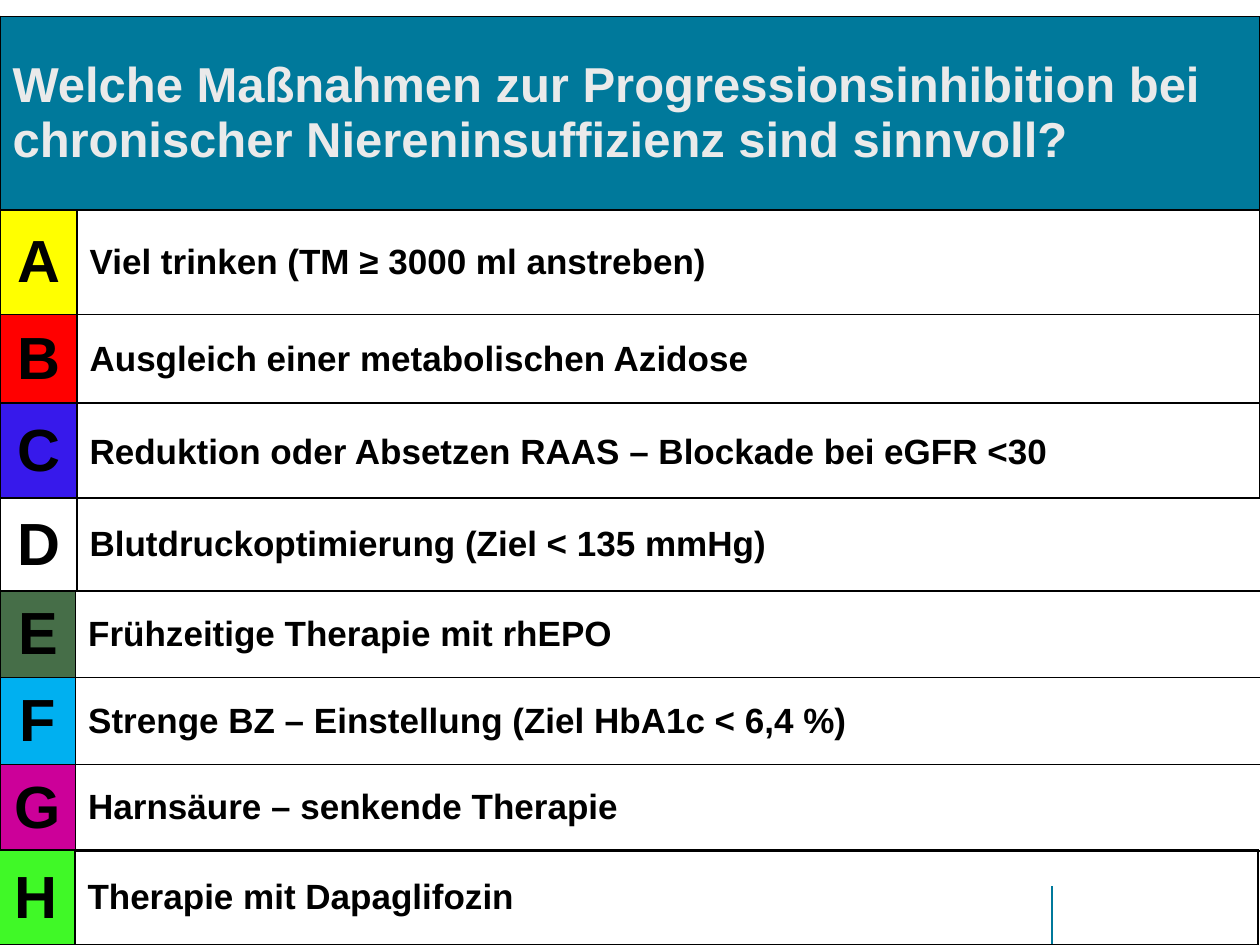
from pptx import Presentation
from pptx.dml.color import RGBColor as RGB
from pptx.enum.shapes import MSO_CONNECTOR as Line
from pptx.enum.text import MSO_ANCHOR as Anchor, PP_ALIGN as Align
from pptx.oxml import parse_xml
from pptx.oxml.ns import nsdecls
from pptx.util import Pt


class Theme:
    font = "Arial"
    teal, pale, ink = "00799B", "EAEAEA", "000000"
    head, mark, body = 28, 34, 20


def add_grid(left, top, cols, rows):
    """Add a plain table from column widths and row heights in points."""
    grid = slide.shapes.add_table(
        len(rows), len(cols), Pt(left), Pt(top), Pt(sum(cols)), Pt(sum(rows))
    ).table
    grid.first_row = grid.horz_banding = False
    for col, width in zip(grid.columns, cols):
        col.width = Pt(width)
    for row, height in zip(grid.rows, rows):
        row.height = Pt(height)
    return grid


def fill_cell(cell, text, size, ink, fill=None, align=Align.LEFT):
    props = cell._tc.get_or_add_tcPr()
    for side in "LRTB":
        props.append(parse_xml(
            f'<a:ln{side} {nsdecls("a")} w="{Pt(1)}"><a:solidFill>'
            f'<a:srgbClr val="{Theme.ink}"/></a:solidFill></a:ln{side}>'))
    if fill:
        cell.fill.solid()
        cell.fill.fore_color.rgb = RGB.from_string(fill)
    else:
        cell.fill.background()
    cell.vertical_anchor = Anchor.MIDDLE
    cell.text = text
    para = cell.text_frame.paragraphs[0]
    para.alignment = align
    para.font.name, para.font.size, para.font.bold = Theme.font, Pt(size), True
    para.font.color.rgb = RGB.from_string(ink)
    return para


deck = Presentation()
deck.slide_width, deck.slide_height = Pt(720), Pt(540)
slide = deck.slides.add_slide(deck.slide_layouts[6])

rule = slide.shapes.add_connector(
    Line.STRAIGHT, Pt(601.2), Pt(540), Pt(601.2), Pt(506.2))
rule.line.color.rgb = RGB.from_string(Theme.teal)
rule.line.width = Pt(0.75)
rule._element.spPr.append(parse_xml(f'<a:effectLst {nsdecls("a")}/>'))

# left, top, column widths, row height, line spacing, answers
groups = [
    (0, 120.2, (44, 676), 59.4, 1, [
        ("A", "FFFF00", "Viel trinken (TM ≥ 3000 ml anstreben)")]),
    (0, 179.8, (44, 676), 50.8, 1, [
        ("B", "FF0000", "Ausgleich einer metabolischen Azidose")]),
    (0, 230.4, (44, 676), 54.4, 1.1, [
        ("C", "3719EB", "Reduktion oder Absetzen RAAS – Blockade bei eGFR <30")]),
    (0, 284.4, (44, 679), 53.6, 1, [
        ("D", None, "Blutdruckoptimierung (Ziel < 135 mmHg)")]),
    (0, 337.6, (43.2, 679.8), 49.6, 1, [
        ("E", "466E48", "Frühzeitige Therapie mit rhEPO"),
        ("F", "00B0F0", "Strenge BZ – Einstellung (Ziel HbA1c < 6,4 %)"),
        ("G", "CC0099", "Harnsäure – senkende Therapie")]),
    (-1.2, 485.6, (44, 676), 54.4, 1, [
        ("H", "40F927", "Therapie mit Dapaglifozin")]),
]
for left, top, cols, height, space, items in groups:
    grid = add_grid(left, top, cols, [height] * len(items))
    for i, (mark, hue, text) in enumerate(items):
        fill_cell(grid.cell(i, 0), mark, Theme.mark, Theme.ink, hue, Align.CENTER)
        para = fill_cell(grid.cell(i, 1), text, Theme.body, Theme.ink)
        para.line_spacing = space

head = add_grid(0, 9.4, [720], [110.4])
fill_cell(
    head.cell(0, 0),
    "Welche Maßnahmen zur Progressionsinhibition bei "
    "chronischer Niereninsuffizienz sind sinnvoll?",
    Theme.head, Theme.pale, Theme.teal)

deck.save("out.pptx")
